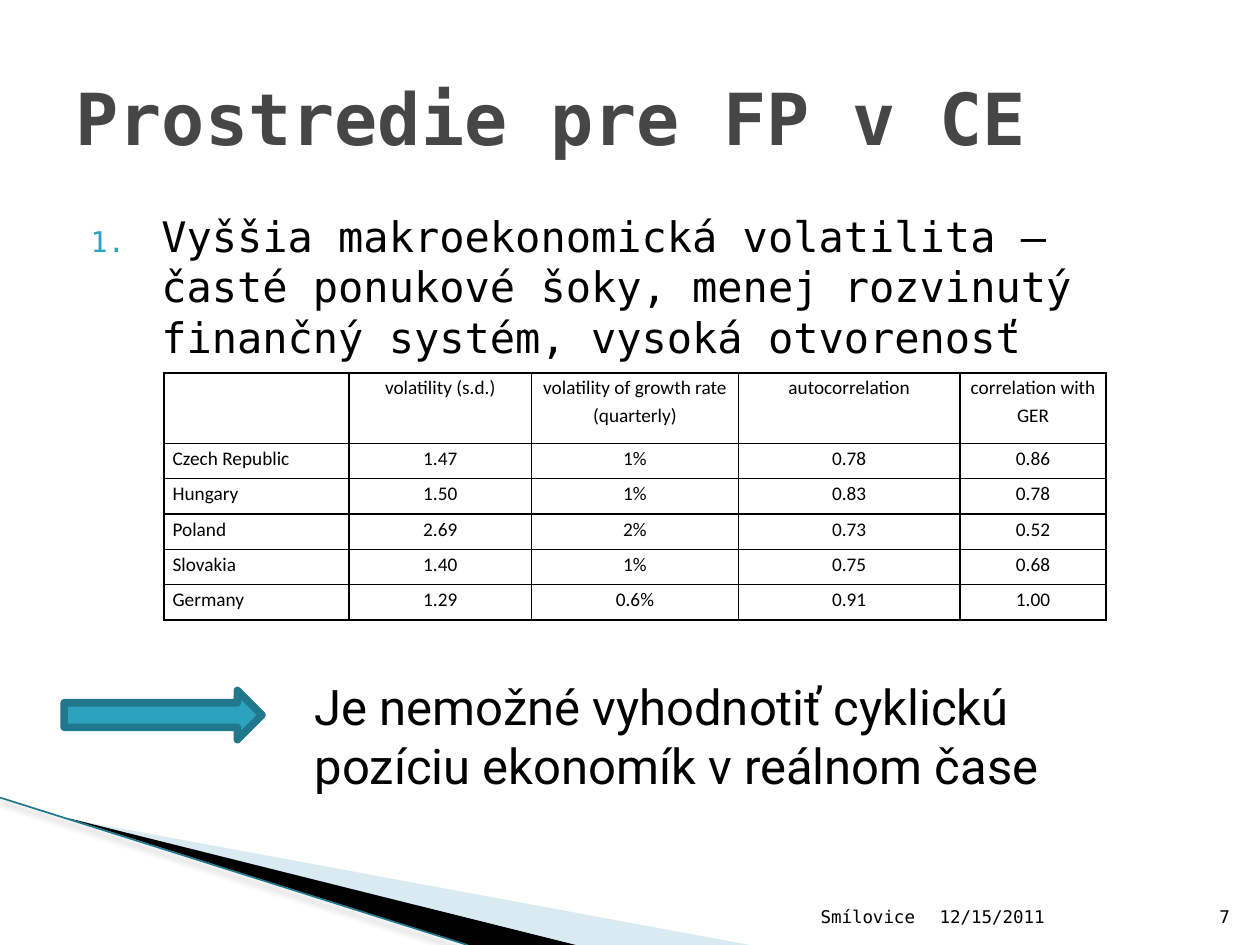
"""Build the slide on macroeconomic volatility in Central Europe."""
import pptx
import pptx.dml.color
import pptx.enum.shapes
import pptx.enum.text
import pptx.oxml
import pptx.oxml.ns
import pptx.util
from pptx.util import Inches

MONO = "DejaVu Sans Mono"
ALIGN = pptx.enum.text.PP_ALIGN
ANCHOR = pptx.enum.text.MSO_ANCHOR
NS = pptx.oxml.ns.nsdecls("a")


def rgb(value):
    """Return a colour from a hex string."""
    return pptx.dml.color.RGBColor.from_string(value)


def style(p, size, name, color="000000", bold=False, align=ALIGN.LEFT):
    """Format the runs of a paragraph."""
    p.alignment = align
    for r in p.runs:
        r.font.size = pptx.util.Pt(size)
        r.font.name = name
        r.font.bold = bold
        r.font.color.rgb = rgb(color)


prs = pptx.Presentation()
prs.slide_width, prs.slide_height = Inches(10), Inches(7.5)
s = prs.slides.add_slide(prs.slide_layouts[1])

title = s.shapes.title
title.left, title.top, title.width, title.height = Inches(0.5), Inches(0.3), Inches(9), Inches(1.25)
tf = title.text_frame
tf.text = "Prostredie pre FP v CE"
tf.auto_size = pptx.enum.text.MSO_AUTO_SIZE.NONE
tf.vertical_anchor = ANCHOR.MIDDLE
style(tf.paragraphs[0], 41, MONO, "464646", True)

body = s.placeholders[1]
body.left, body.top, body.width, body.height = Inches(0.5), Inches(1.62), Inches(9), Inches(4.95)
tf = body.text_frame
tf.text = ("Vyššia makroekonomická volatilita – časté ponukové šoky, "
           "menej rozvinutý finančný systém, vysoká otvorenosť")
tf.auto_size = pptx.enum.text.MSO_AUTO_SIZE.NONE
p = tf.paragraphs[0]
p.space_before = pptx.util.Pt(0)
pPr = p._p.get_or_add_pPr()
pPr.set("marL", str(Inches(0.68)))
pPr.set("indent", str(Inches(-0.56)))
for xml in (f'<a:buClr {NS}><a:srgbClr val="2DA2BF"/></a:buClr>',
            f'<a:buSzPct {NS} val="68000"/>',
            f'<a:buFont {NS} typeface="{MONO}"/>',
            f'<a:buAutoNum {NS} type="arabicPeriod"/>'):
    pPr.append(pptx.oxml.parse_xml(xml))
style(p, 24, MONO)

wedges = [
    ("A0CBDC", 40, [(0.55, 6.5), (5.95, 7.5), (4.56, 7.5)]),
    ("000000", 100, [(0.53, 6.49), (4.57, 7.5), (3.72, 7.5)]),
]
for color, alpha, points in wedges:
    points = [(Inches(x), Inches(y)) for x, y in points]
    fb = s.shapes.build_freeform(*points[0], scale=1.0)
    fb.add_line_segments(points[1:], close=True)
    sp = fb.convert_to_shape()
    sp.shadow.inherit = False
    sp.line.fill.background()
    sp.fill.solid()
    sp.fill.fore_color.rgb = rgb(color)
    clr = sp._element.spPr.find(".//" + pptx.oxml.ns.qn("a:srgbClr"))
    clr.append(pptx.oxml.parse_xml(f'<a:alpha {NS} val="{alpha * 1000}"/>'))

edge = s.shapes.add_connector(pptx.enum.shapes.MSO_CONNECTOR.STRAIGHT,
                              Inches(0), Inches(6.33), Inches(3.71), Inches(7.5))
edge.line.color.rgb = rgb("21788D")
edge.line.width = pptx.util.Pt(0.95)
edge._element.spPr.append(pptx.oxml.parse_xml(
    f'<a:effectLst {NS}><a:outerShdw blurRad="50800" dist="38100" dir="5400000">'
    '<a:srgbClr val="000000"><a:alpha val="35000"/></a:srgbClr></a:outerShdw></a:effectLst>'))

footers = [
    ("12/15/2011", 7.36, 2.1, ALIGN.LEFT),
    ("Smílovice", 4.79, 2.57, ALIGN.RIGHT),
    ("7", 9.46, 0.4, ALIGN.RIGHT),
]
for text, left, width, align in footers:
    tf = s.shapes.add_textbox(Inches(left), Inches(7.01), Inches(width), Inches(0.4)).text_frame
    tf.word_wrap = True
    tf.vertical_anchor = ANCHOR.BOTTOM
    tf.text = text
    style(tf.paragraphs[0], 10, MONO, align=align)

rows = [
    ["", "volatility (s.d.)", "volatility of growth rate (quarterly)", "autocorrelation",
     "correlation with GER"],
    ["Czech Republic", "1.47", "1%", "0.78", "0.86"],
    ["Hungary", "1.50", "1%", "0.83", "0.78"],
    ["Poland", "2.69", "2%", "0.73", "0.52"],
    ["Slovakia", "1.40", "1%", "0.75", "0.68"],
    ["Germany", "1.29", "0.6%", "0.91", "1.00"],
]
widths = [1.47, 1.45, 1.64, 1.76, 1.16]
table = s.shapes.add_table(len(rows), len(widths), Inches(1.3), Inches(2.96),
                           Inches(7.48), Inches(1.97)).table
table.first_row = table.horz_banding = False
for column, width in zip(table.columns, widths):
    column.width = Inches(width)
for i, values in enumerate(rows):
    table.rows[i].height = Inches(0.28 if i else 0.56)
    for j, value in enumerate(values):
        cell = table.cell(i, j)
        cell.margin_left = cell.margin_right = Inches(0.07)
        cell.margin_top = cell.margin_bottom = Inches(0)
        tcPr = cell._tc.get_or_add_tcPr()
        for side in "LRTB":
            tcPr.append(pptx.oxml.parse_xml(
                f'<a:ln{side} {NS} w="12700"><a:solidFill><a:srgbClr val="000000"/>'
                f'</a:solidFill></a:ln{side}>'))
        cell.fill.background()
        cell.text = value
        p = cell.text_frame.paragraphs[0]
        p.line_spacing = 1.15
        style(p, 11, "Calibri", align=ALIGN.CENTER if j else ALIGN.JUSTIFY)

arrow = s.shapes.add_shape(pptx.enum.shapes.MSO_SHAPE.RIGHT_ARROW,
                           Inches(0.51), Inches(5.48), Inches(1.57), Inches(0.39))
arrow.shadow.inherit = False
arrow.fill.solid()
arrow.fill.fore_color.rgb = rgb("2DA2BF")
arrow.line.color.rgb = rgb("21788D")
arrow.line.width = pptx.util.Pt(4.33)

tf = s.shapes.add_textbox(Inches(2.4), Inches(5.32), Inches(6.69), Inches(1.04)).text_frame
tf.word_wrap = True
tf.text = "Je nemožné vyhodnotiť cyklickú pozíciu ekonomík v reálnom čase"
style(tf.paragraphs[0], 28, "Roboto")

prs.save("out.pptx")
